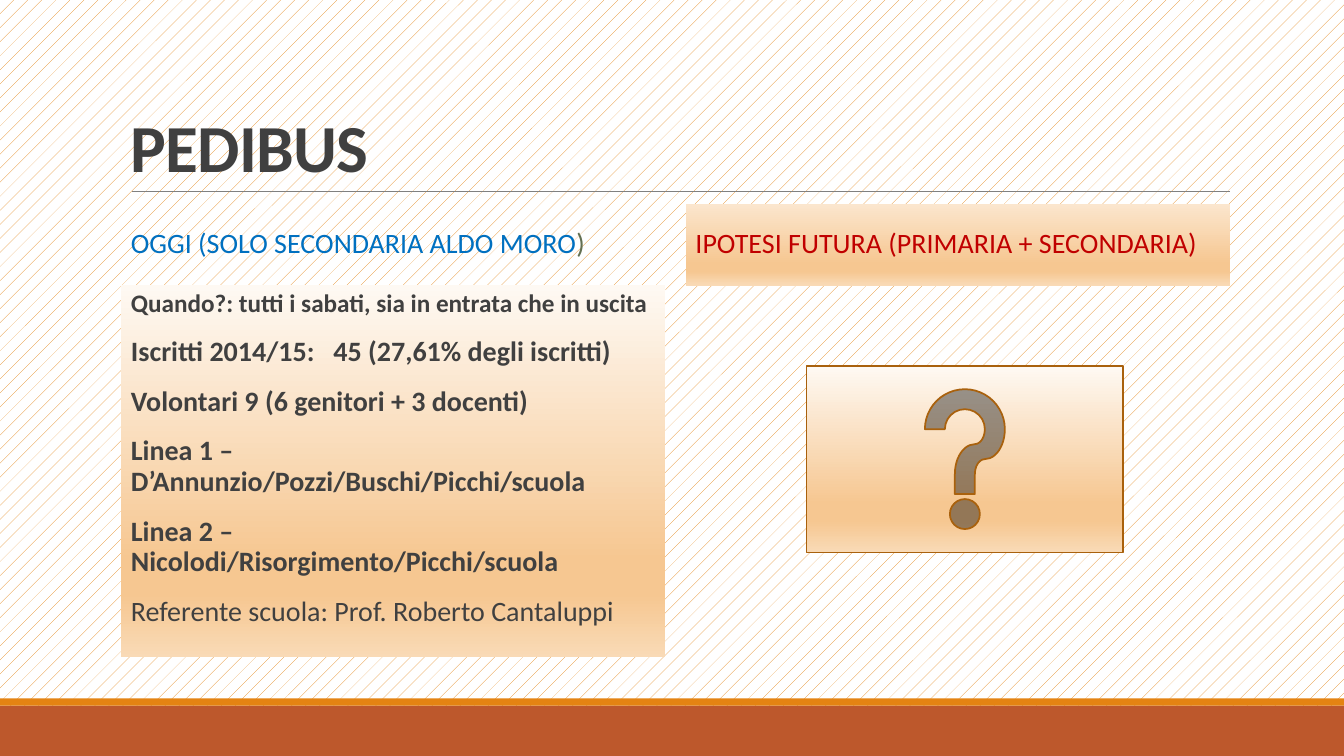
from dataclasses import dataclass

from lxml.etree import SubElement
from pptx import Presentation
from pptx.dml.color import RGBColor
from pptx.enum.dml import MSO_PATTERN
from pptx.enum.shapes import MSO_CONNECTOR, MSO_SHAPE
from pptx.enum.text import MSO_ANCHOR, PP_ALIGN
from pptx.oxml.ns import qn
from pptx.shapes.autoshape import Shape
from pptx.slide import Slide
from pptx.util import Inches, Pt

ORANGE = "E48312"
RUST = "BD582C"
DARK = "404040"
PALE_TOP = "FEF9F3"
PEACH_TOP = "FBE6CE"
LEFT_COLUMN, RIGHT_COLUMN = 1.2, 6.8
COLUMN_WIDTH = 5.4
HEADING_TOP, HEADING_HEIGHT = 2.02, 0.81


@dataclass(frozen=True)
class Box:
    left: float
    top: float
    width: float
    height: float


@dataclass(frozen=True)
class TextRun:
    text: str
    size: float
    color: str = DARK
    bold: bool = False
    spacing: int = 0


@dataclass(frozen=True)
class TextPanel:
    box: Box
    paragraphs: list[list[TextRun]]
    anchor: MSO_ANCHOR = MSO_ANCHOR.MIDDLE
    gradient_top: str = ""
    line_spacing: float = 0.9
    space_before: float = 12
    space_after: float = 2


def color_of(value: str) -> RGBColor:
    return RGBColor.from_string(value)


def add_box(slide: Slide, box: Box, kind: MSO_SHAPE = MSO_SHAPE.RECTANGLE) -> Shape:
    shape = slide.shapes.add_shape(
        kind, Inches(box.left), Inches(box.top), Inches(box.width), Inches(box.height)
    )
    shape.shadow.inherit = False
    shape.line.fill.background()
    return shape


def fill_gradient(shape: Shape, top_color: str) -> None:
    shape.fill.gradient()
    shape.fill.gradient_angle = 270
    stops = shape.fill._fill._gradFill.find(qn("a:gsLst"))
    for stop in list(stops):
        stops.remove(stop)
    for percent, color in ((0, top_color), (74, "F6C791"), (83, "F6C791"), (100, "F9DAB6")):
        stop = SubElement(stops, qn("a:gs"), pos=str(percent * 1000))
        SubElement(stop, qn("a:srgbClr"), val=color)


def add_panel(slide: Slide, panel: TextPanel) -> None:
    shape = add_box(slide, panel.box)
    if panel.gradient_top:
        fill_gradient(shape, panel.gradient_top)
    else:
        shape.fill.background()
    frame = shape.text_frame
    frame.word_wrap = True
    frame.vertical_anchor = panel.anchor
    for index, text_runs in enumerate(panel.paragraphs):
        paragraph = frame.add_paragraph() if index else frame.paragraphs[0]
        paragraph.alignment = PP_ALIGN.LEFT
        paragraph.line_spacing = panel.line_spacing
        paragraph.space_before = Pt(panel.space_before)
        paragraph.space_after = Pt(panel.space_after)
        for text_run in text_runs:
            run = paragraph.add_run()
            run.text = text_run.text
            run.font.name = "Calibri"
            run.font.size = Pt(text_run.size)
            run.font.bold = text_run.bold
            run.font.color.rgb = color_of(text_run.color)
            if text_run.spacing:
                run.font._element.set("spc", str(text_run.spacing))


def add_title_rule(slide: Slide) -> None:
    rule = slide.shapes.add_connector(
        MSO_CONNECTOR.STRAIGHT, Inches(1.31), Inches(1.9), Inches(12.2), Inches(1.9)
    )
    rule.line.color.rgb = color_of("808080")
    rule.line.width = Pt(0.5)
    SubElement(rule._element.spPr, qn("a:effectLst"))


def add_help_button(slide: Slide) -> None:
    button = add_box(slide, Box(8, 3.63, 3.14, 1.85), MSO_SHAPE.ACTION_BUTTON_HELP)
    fill_gradient(button, PALE_TOP)
    button.line.color.rgb = color_of("A9610D")
    button.line.width = Pt(1.25)


PANELS = [
    TextPanel(
        Box(LEFT_COLUMN, 0.31, 11, 1.59),
        [[TextRun("PEDIBUS", 48, bold=True, spacing=-50)]],
        anchor=MSO_ANCHOR.BOTTOM,
        line_spacing=0.85,
        space_before=0,
        space_after=0,
    ),
    TextPanel(
        Box(LEFT_COLUMN, HEADING_TOP, COLUMN_WIDTH, HEADING_HEIGHT),
        [[TextRun("OGGI (SOLO SECONDARIA ALDO MORO", 20, "0070C0"), TextRun(")", 20, "637052")]],
    ),
    TextPanel(
        Box(LEFT_COLUMN, HEADING_TOP + HEADING_HEIGHT, COLUMN_WIDTH, 3.69),
        [
            [TextRun("Quando?: tutti i sabati, sia in entrata che in uscita", 18, bold=True)],
            [TextRun("Iscritti 2014/15:   45 (27,61% degli iscritti)", 20, bold=True)],
            [TextRun("Volontari 9 (6 genitori + 3 docenti)", 20, bold=True)],
            [TextRun("Linea 1 – D’Annunzio/Pozzi/Buschi/Picchi/scuola", 20, bold=True)],
            [TextRun("Linea 2 – Nicolodi/Risorgimento/Picchi/scuola", 20, bold=True)],
            [TextRun("Referente scuola: Prof. Roberto Cantaluppi", 20)],
        ],
        anchor=MSO_ANCHOR.TOP,
        gradient_top=PALE_TOP,
    ),
    TextPanel(
        Box(RIGHT_COLUMN, HEADING_TOP, COLUMN_WIDTH, HEADING_HEIGHT),
        [[TextRun("IPOTESI FUTURA (PRIMARIA + SECONDARIA)", 20, "C00000")]],
        gradient_top=PEACH_TOP,
    ),
]


def main() -> None:
    presentation = Presentation()
    presentation.slide_width = Inches(13.33)
    presentation.slide_height = Inches(7.5)
    slide = presentation.slides.add_slide(presentation.slide_layouts[6])

    background = slide.background.fill
    background.patterned()
    background.pattern = MSO_PATTERN.PERCENT_5
    background.fore_color.rgb = color_of(ORANGE)
    background.back_color.rgb = color_of("FFFFFF")

    for box, color in ((Box(0, 7, 13.33, 0.5), RUST), (Box(0, 6.93, 13.33, 0.07), ORANGE)):
        band = add_box(slide, box)
        band.fill.solid()
        band.fill.fore_color.rgb = color_of(color)
    add_title_rule(slide)
    for panel in PANELS:
        add_panel(slide, panel)
    add_help_button(slide)
    presentation.save("out.pptx")


if __name__ == "__main__":
    main()
